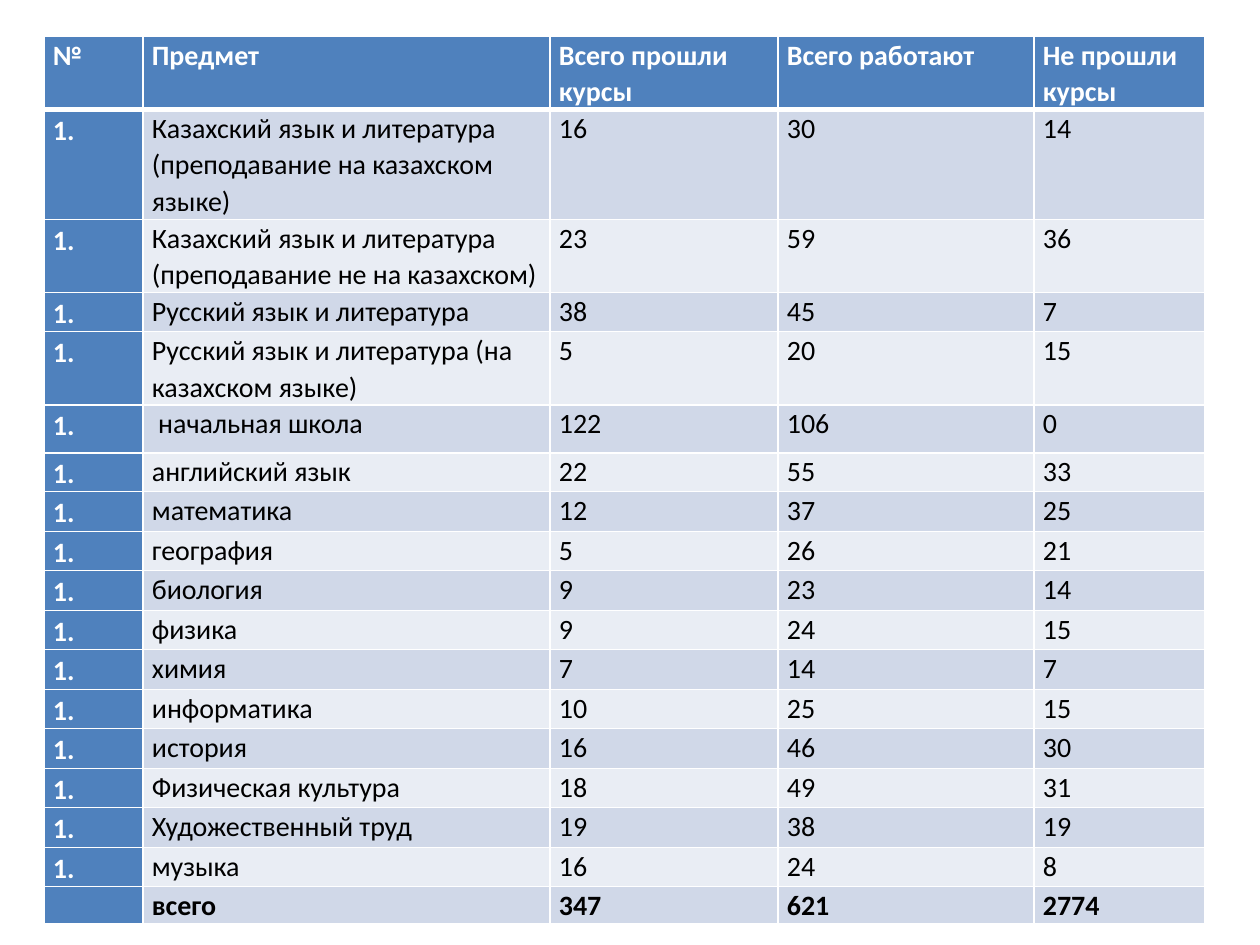
from lxml.etree import SubElement
from pptx import Presentation
from pptx.dml.color import RGBColor
from pptx.oxml.ns import qn
from pptx.util import Emu, Pt

PIXELS_PER_INCH = 126
WHITE = RGBColor(0xFF, 0xFF, 0xFF)
BLACK = RGBColor(0x00, 0x00, 0x00)
BLUE = RGBColor(0x4F, 0x81, 0xBD)
DARK_BAND = RGBColor(0xD0, 0xD8, 0xE8)
LIGHT_BAND = RGBColor(0xE9, 0xED, 0xF4)

HEADINGS = ("№", "Предмет", "Всего прошли курсы", "Всего работают", "Не прошли курсы")
SUBJECTS = (
    ("Казахский язык и литература (преподавание на казахском языке)", 16, 30, 14),
    ("Казахский язык и литература (преподавание не на казахском)", 23, 59, 36),
    ("Русский язык и литература", 38, 45, 7),
    ("Русский язык и литература (на казахском языке)", 5, 20, 15),
    (" начальная школа", 122, 106, 0),
    ("английский язык", 22, 55, 33),
    ("математика", 12, 37, 25),
    ("география", 5, 26, 21),
    ("биология", 9, 23, 14),
    ("физика", 9, 24, 15),
    ("химия", 7, 14, 7),
    ("информатика", 10, 25, 15),
    ("история", 16, 46, 30),
    ("Физическая культура", 18, 49, 31),
    ("Художественный труд", 19, 38, 19),
    ("музыка", 16, 24, 8),
)
TOTALS = ("", "всего", 347, 621, 2774)
COLUMN_WIDTHS = (99, 407, 228, 256, 171)
# The single-line rows alternate between 39 and 40 px
ROW_HEIGHTS = [73, 110, 73, 39, 73, 48] + [39 + step % 2 for step in range(11)] + [37]


def px(length):
    return Emu(round(length * 914400 / PIXELS_PER_INCH))


def set_attributes(target, values):
    for name, value in values.items():
        setattr(target, name, value)


def add_borders(cell, widths):
    properties = cell._tc.get_or_add_tcPr()
    for side, width in widths.items():
        line = SubElement(properties, qn(f"a:ln{side}"), w=str(Pt(width)))
        fill = SubElement(line, qn("a:solidFill"))
        SubElement(fill, qn("a:srgbClr"), val=str(WHITE))


def write_cell(cell, text, fill_color, font_values, color, top_margin=0):
    set_attributes(cell, {
        "margin_left": px(9), "margin_right": px(9),
        "margin_top": px(top_margin), "margin_bottom": 0,
    })
    cell.fill.solid()
    cell.fill.fore_color.rgb = fill_color
    para = cell.text_frame.paragraphs[0]
    para.line_spacing = 1.07
    set_attributes(para.font, font_values)
    if text:
        span = para.add_run()
        span.text = text
        set_attributes(span.font, font_values)
        span.font.color.rgb = color


def add_course_table(page, rows):
    frame = page.shapes.add_table(
        len(rows), len(HEADINGS), px(44), px(36),
        px(sum(COLUMN_WIDTHS)), px(sum(ROW_HEIGHTS)))
    table = frame.table
    for column, width in zip(table.columns, COLUMN_WIDTHS):
        column.width = px(width)
    for table_row, height in zip(table.rows, ROW_HEIGHTS):
        table_row.height = px(height)

    last_row = len(rows) - 1
    for row_index, values in enumerate(rows):
        band = DARK_BAND if row_index % 2 else LIGHT_BAND
        for column_index, value in enumerate(values):
            cell = table.cell(row_index, column_index)
            is_heading = row_index == 0 or column_index == 0
            is_number = column_index == 0 and 0 < row_index < last_row
            add_borders(cell, {
                "L": 1, "R": 1,
                "T": 3 if row_index == 1 else 1,
                "B": 3 if row_index == 0 else 1,
            })
            font_values = {
                "name": "Calibri", "size": Pt(16),
                "bold": is_heading or row_index == last_row,
            }
            write_cell(cell, str(value), BLUE if is_heading else band, font_values,
                       WHITE if is_heading else BLACK, 2 if is_number else 0)


def main():
    deck = Presentation()
    deck.slide_width, deck.slide_height = px(1260), px(945)
    page = deck.slides.add_slide(deck.slide_layouts[6])

    # Heading row, numbered subjects, totals
    rows = [HEADINGS, *(("1.", *subject) for subject in SUBJECTS), TOTALS]
    add_course_table(page, rows)
    deck.save("out.pptx")


if __name__ == "__main__":
    main()
